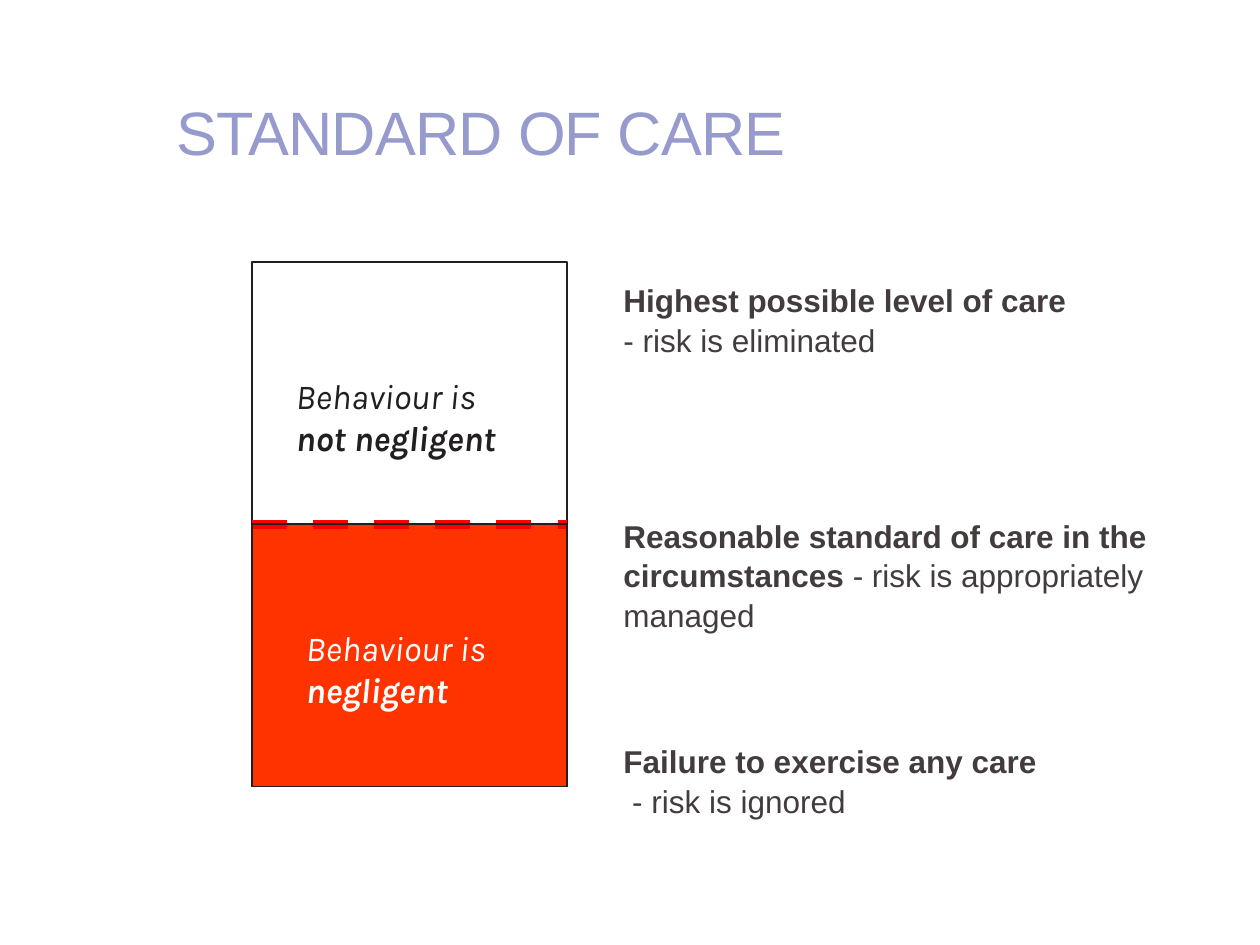
from dataclasses import dataclass
from typing import Optional

from lxml.etree import SubElement
from pptx import Presentation
from pptx.dml.color import RGBColor
from pptx.enum.dml import MSO_LINE_DASH_STYLE as Dash
from pptx.enum.shapes import MSO_CONNECTOR as Connector, MSO_SHAPE as Shape
from pptx.enum.text import MSO_ANCHOR as Anchor
from pptx.oxml.ns import qn
from pptx.util import Inches, Pt


@dataclass(frozen=True)
class Theme:
    title: RGBColor = RGBColor(0x96, 0x9A, 0xCC)
    body: RGBColor = RGBColor(0x42, 0x3C, 0x3D)
    ink: RGBColor = RGBColor(0x22, 0x1F, 0x1F)
    white: RGBColor = RGBColor(0xFF, 0xFF, 0xFF)
    negligent: RGBColor = RGBColor(0xFF, 0x33, 0x00)
    threshold: RGBColor = RGBColor(0xFF, 0x00, 0x00)
    title_size: int = 35
    body_size: int = 18
    zone_size: int = 20
    main_font: str = "Arial"
    zone_font: str = "Karla"


@dataclass(frozen=True)
class CareLevel:
    heading: str
    risk: str
    space_before: float


@dataclass(frozen=True)
class ZoneLabel:
    left: float
    top: float
    width: float
    emphasis: str
    color: RGBColor


THEME = Theme()
BAR_LEFT, BAR_TOP, BAR_WIDTH, ZONE_HEIGHT = 2, 2.08, 2.5, 2.08
THRESHOLD_TOP = BAR_TOP + ZONE_HEIGHT

CARE_LEVELS = (
    CareLevel("Highest possible level of care", "\n- risk is eliminated", 0),
    CareLevel("Reasonable standard of care in the circumstances",
              " - risk is appropriately\nmanaged", 89),
    CareLevel("Failure to exercise any care", "\n - risk is ignored", 61),
)
ZONE_LABELS = (
    ZoneLabel(2.25, 2.92, 2.08, "not negligent", THEME.ink),
    ZoneLabel(2.33, 4.92, 1.83, "negligent", THEME.white),
)


def add_text_frame(slide, left: float, top: float, width: float, height: float):
    box = slide.shapes.add_textbox(Inches(left), Inches(top), Inches(width), Inches(height))
    box.text_frame.word_wrap = True
    return box.text_frame


def set_font(paragraph, name: str, size: int, color: RGBColor) -> None:
    paragraph.font.name = name
    paragraph.font.size = Pt(size)
    paragraph.font.color.rgb = color


def add_run(paragraph, text: str, bold: bool = False):
    run = paragraph.add_run()
    run.text = text
    run.font.bold = bold
    return run


def add_title(slide, text: str) -> None:
    frame = add_text_frame(slide, 1.3, 0.21, 7.08, 1.17)
    frame.vertical_anchor = Anchor.BOTTOM
    paragraph = frame.paragraphs[0]
    set_font(paragraph, THEME.main_font, THEME.title_size, THEME.title)
    run = add_run(paragraph, text)
    run._r.get_or_add_rPr().set("spc", "-50")


def add_care_levels(slide, levels: tuple[CareLevel, ...]) -> None:
    frame = add_text_frame(slide, 4.47, 2.17, 4.87, 4.5)
    for index, level in enumerate(levels):
        paragraph = frame.paragraphs[0] if index == 0 else frame.add_paragraph()
        paragraph._p.get_or_add_pPr().set("marL", str(Inches(0.38)))
        paragraph.space_before = Pt(level.space_before)
        paragraph.line_spacing = 1.05
        set_font(paragraph, THEME.main_font, THEME.body_size, THEME.body)
        add_run(paragraph, level.heading, bold=True)
        before_break, after_break = level.risk.split("\n")
        if before_break:
            add_run(paragraph, before_break)
        paragraph.add_line_break()
        add_run(paragraph, after_break)


def add_zone(slide, top: float, fill: Optional[RGBColor] = None) -> None:
    zone = slide.shapes.add_shape(Shape.RECTANGLE, Inches(BAR_LEFT), Inches(top),
                                  Inches(BAR_WIDTH), Inches(ZONE_HEIGHT))
    zone.shadow.inherit = False
    if fill is None:
        zone.fill.background()
    else:
        zone.fill.solid()
        zone.fill.fore_color.rgb = fill
    zone.line.color.rgb = THEME.ink
    zone.line.width = Pt(0.75)


def add_zone_label(slide, label: ZoneLabel) -> None:
    frame = add_text_frame(slide, label.left, label.top, label.width, 0.77)
    paragraph = frame.paragraphs[0]
    set_font(paragraph, THEME.zone_font, THEME.zone_size, label.color)
    paragraph.font.italic = True
    add_run(paragraph, "Behaviour is ")
    add_run(paragraph, label.emphasis, bold=True)


def add_threshold(slide) -> None:
    line = slide.shapes.add_connector(Connector.STRAIGHT, Inches(BAR_LEFT), Inches(THRESHOLD_TOP),
                                      Inches(BAR_LEFT + BAR_WIDTH), Inches(THRESHOLD_TOP))
    line.line.color.rgb = THEME.threshold
    line.line.width = Pt(5)
    line.line.dash_style = Dash.DASH
    SubElement(line._element.spPr, qn("a:effectLst"))


def main() -> None:
    presentation = Presentation()
    presentation.slide_width = Inches(10)
    presentation.slide_height = Inches(7.5)
    slide = presentation.slides.add_slide(presentation.slide_layouts[6])

    add_title(slide, "STANDARD OF CARE")
    add_care_levels(slide, CARE_LEVELS)
    add_zone(slide, THRESHOLD_TOP, THEME.negligent)
    add_zone(slide, BAR_TOP)
    for label in ZONE_LABELS:
        add_zone_label(slide, label)
    add_threshold(slide)
    add_zone(slide, THRESHOLD_TOP)

    presentation.save("out.pptx")


if __name__ == "__main__":
    main()
